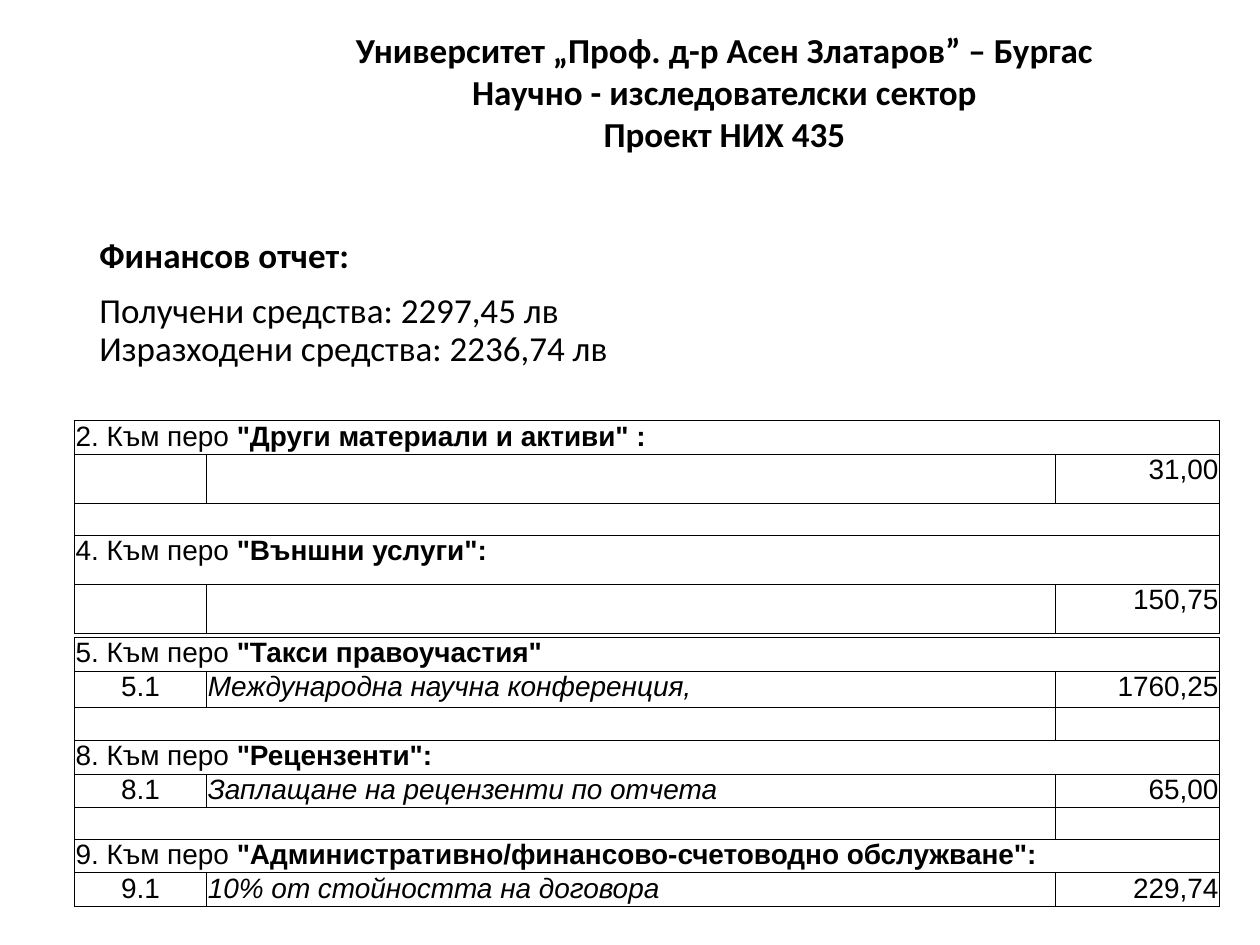
from lxml import etree
from pptx import Presentation
from pptx.dml.color import RGBColor
from pptx.enum import text
from pptx.oxml import ns
from pptx.util import Inches, Pt

BLACK = RGBColor(0, 0, 0)
LEFT, CENTER, RIGHT = text.PP_ALIGN.LEFT, text.PP_ALIGN.CENTER, text.PP_ALIGN.RIGHT

HEADING = [
    "Университет „Проф. д-р Асен Златаров” – Бургас",
    "Научно - изследователски сектор",
    "Проект НИХ 435",
]
REPORT = [
    ("Финансов отчет:", True),
    ("Получени средства: 2297,45 лв\vИзразходени средства: 2236,74 лв", False),
]

COLUMNS = [1.05, 6.74, 1.3]
TABLE_LEFT = 0.59
TITLE, GAP, SPLIT_GAP, ITEM = "title", "gap", "split gap", "item"
MERGED = {TITLE: 3, GAP: 3, SPLIT_GAP: 2, ITEM: 1}
MATERIALS_AND_SERVICES = [
    (0.25, TITLE, ("2. Към перо ", "\"Други материали и активи\" :")),
    (0.39, ITEM, ("", "", "31,00")),
    (0.25, GAP, ()),
    (0.39, TITLE, ("4. Към перо ", "\"Външни услуги\":")),
    (0.39, ITEM, ("", "", "150,75")),
]
FEES_AND_ADMIN = [
    (0.25, TITLE, ("5. Към перо ", "\"Такси правоучастия\"")),
    (0.29, ITEM, ("5.1", "Международна научна конференция,", "1760,25")),
    (0.26, SPLIT_GAP, ()),
    (0.25, TITLE, ("8. Към перо ", "\"Рецензенти\":")),
    (0.26, ITEM, ("8.1", "Заплащане на рецензенти по отчета", "65,00")),
    (0.25, SPLIT_GAP, ()),
    (0.25, TITLE, ("9. Към перо ", "\"Административно/финансово-счетоводно обслужване\":")),
    (0.25, ITEM, ("9.1", "10% от стойността на договора", "229,74")),
]
TABLES = [(3.34, MATERIALS_AND_SERVICES), (5.06, FEES_AND_ADMIN)]
ITEM_FORMATS = [(CENTER, False), (LEFT, True), (RIGHT, False)]
CELL_FORMAT = dict(margin_left=Inches(0.01), margin_right=Inches(0.01),
                   margin_top=0, margin_bottom=0)


def apply(target, formats):
    for name, value in formats.items():
        setattr(target, name, value)


def write(paragraph, words, font, size, **formats):
    for index, part in enumerate(words.split("\v")):
        if index:
            paragraph.add_line_break()
        run = paragraph.add_run()
        run.text = part
        run.font.color.rgb = BLACK
        apply(run.font, dict(name=font, size=Pt(size), **formats))


def add_text(slide, box, paragraphs, **formats):
    frame = slide.shapes.add_textbox(*map(Inches, box)).text_frame
    frame.word_wrap = True
    for index, (words, bold) in enumerate(paragraphs):
        paragraph = frame.paragraphs[0] if index == 0 else frame.add_paragraph()
        write(paragraph, words, "Calibri", 20, bold=bold)
        apply(paragraph, formats)
        if index == 0:
            paragraph.space_before = Pt(0)


def add_borders(cell):
    properties = cell._tc.get_or_add_tcPr()
    for position, side in enumerate(("lnL", "lnR", "lnT", "lnB")):
        line = etree.Element(ns.qn("a:" + side), w=str(Pt(0.5)))
        fill = etree.SubElement(line, ns.qn("a:solidFill"))
        etree.SubElement(fill, ns.qn("a:srgbClr"), val=str(BLACK))
        properties.insert(position, line)


def add_table(slide, top, rows):
    heights = [height for height, _, _ in rows]
    table = slide.shapes.add_table(
        len(rows), len(COLUMNS), Inches(TABLE_LEFT), Inches(top),
        Inches(sum(COLUMNS)), Inches(sum(heights))).table
    apply(table, dict(first_row=False, horz_banding=False))
    for column, width in zip(table.columns, COLUMNS):
        column.width = Inches(width)
    for index, (height, kind, words) in enumerate(rows):
        table.rows[index].height = Inches(height)
        cells = list(table.rows[index].cells)
        for cell in cells:
            apply(cell, CELL_FORMAT)
            cell.fill.background()
            add_borders(cell)
        if kind == TITLE:
            for part, bold in zip(words, (False, True)):
                write(cells[0].text_frame.paragraphs[0], part, "Arial", 16, bold=bold)
        for cell, part, (align, italic) in zip(cells, words if kind == ITEM else (), ITEM_FORMATS):
            if part:
                paragraph = cell.text_frame.paragraphs[0]
                paragraph.alignment = align
                write(paragraph, part, "Arial", 16, italic=italic)
        for cell in cells:
            if not cell.text:
                end = etree.SubElement(cell.text_frame.paragraphs[0]._p, ns.qn("a:endParaRPr"))
                end.set("sz", "1200")
        if MERGED[kind] > 1:
            cells[0].merge(cells[MERGED[kind] - 1])


def main():
    deck = Presentation()
    apply(deck, dict(slide_width=Inches(10), slide_height=Inches(7.5)))
    slide = deck.slides.add_slide(deck.slide_layouts[6])
    add_text(slide, (1.81, 0.18, 7.88, 1.11), [(line, True) for line in HEADING],
             alignment=CENTER)
    add_text(slide, (0.69, 1.84, 8.62, 1.4), REPORT,
             line_spacing=0.9, space_before=Pt(10))
    for top, rows in TABLES:
        add_table(slide, top, rows)
    deck.save("out.pptx")


if __name__ == "__main__":
    main()
